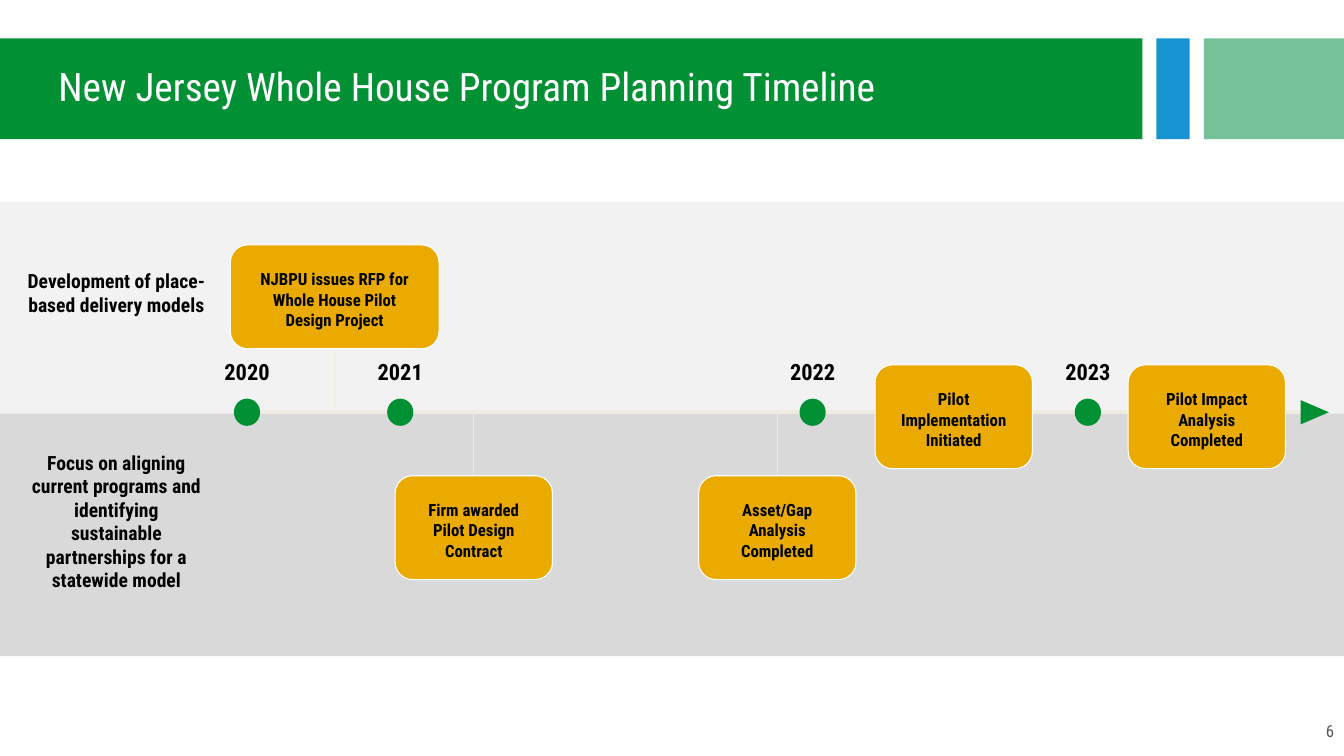
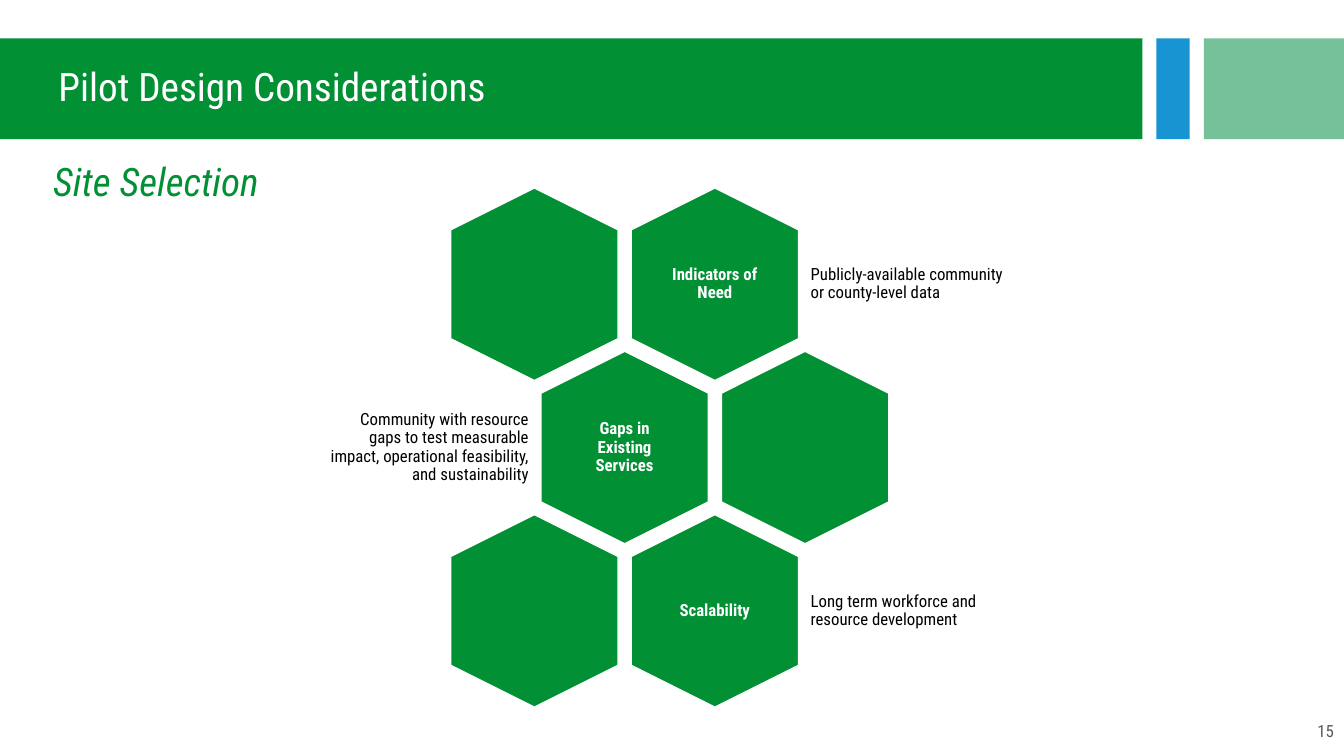
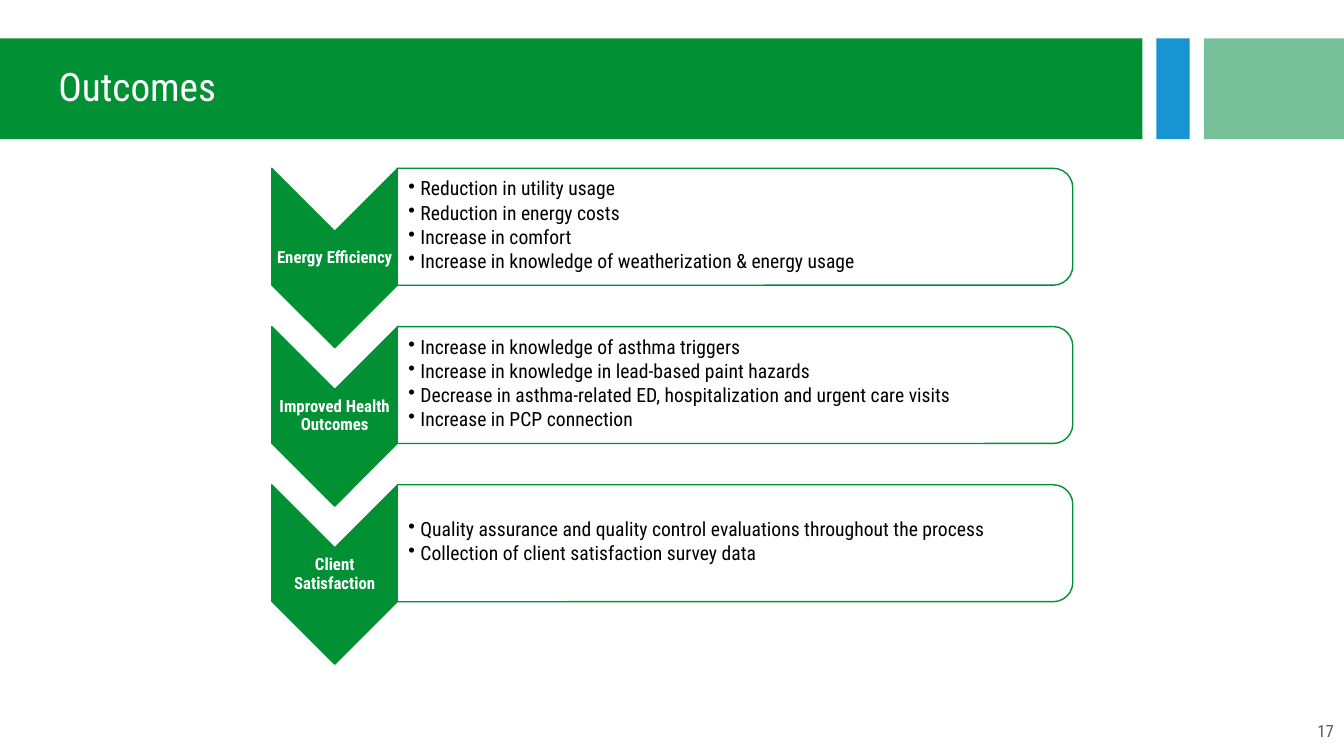
from dataclasses import dataclass

from lxml.etree import SubElement
from pptx import Presentation
from pptx.dml.color import RGBColor
from pptx.enum.shapes import MSO_CONNECTOR, MSO_SHAPE
from pptx.enum.text import MSO_ANCHOR, PP_ALIGN
from pptx.oxml.ns import qn
from pptx.shapes.autoshape import Shape
from pptx.slide import Slide
from pptx.util import Inches, Pt


# Theme: colours and type sizes
@dataclass(frozen=True)
class Theme:
    font: str = "Roboto Condensed"
    green: str = "029035"
    blue: str = "1894D2"
    mint: str = "77C19A"
    gold: str = "EAAA00"
    cream: str = "EEECE1"
    light_gray: str = "F2F2F2"
    mid_gray: str = "D9D9D9"
    number_gray: str = "595959"
    white: str = "FFFFFF"
    black: str = "000000"
    title_size: int = 28
    year_size: int = 16
    body_size: int = 14
    small_size: int = 12


THEME = Theme()


@dataclass(frozen=True)
class Area:
    left: float
    top: float
    width: float
    height: float

    @classmethod
    def centred(cls, x: float, y: float, width: float, height: float) -> "Area":
        return cls(x - width / 2, y - height / 2, width, height)

    def lengths(self) -> list[Inches]:
        return [Inches(v) for v in (self.left, self.top, self.width, self.height)]


@dataclass(frozen=True)
class TextStyle:
    size: int
    color: str = THEME.black
    bold: bool = False
    italic: bool = False
    align: PP_ALIGN = PP_ALIGN.LEFT
    anchor: MSO_ANCHOR = MSO_ANCHOR.TOP
    margins: tuple[float, float, float, float] = (0.1, 0.05, 0.1, 0.05)
    line_spacing: float = 1.0
    space_after: float = 0
    bullet_indent: float = 0
    wrap: bool = True


# Text styles
FLUSH = (0, 0, 0, 0)
TIGHT = (0.05, 0.05, 0.05, 0.05)
HAIRLINE = (0.01, 0.01, 0.01, 0.01)
TITLE = TextStyle(THEME.title_size, THEME.white, anchor=MSO_ANCHOR.MIDDLE,
                  margins=(0.6, 0.05, 0.1, 0.05), line_spacing=0.9)
SUBTITLE = TextStyle(THEME.title_size, THEME.green, italic=True, line_spacing=0.9)
PAGE_NUMBER = TextStyle(THEME.small_size, THEME.number_gray, align=PP_ALIGN.RIGHT)
YEAR = TextStyle(THEME.year_size, bold=True, align=PP_ALIGN.CENTER, margins=FLUSH)
LANE = TextStyle(THEME.body_size, bold=True, align=PP_ALIGN.CENTER, margins=FLUSH)
MILESTONE = TextStyle(THEME.small_size, bold=True, align=PP_ALIGN.CENTER,
                      anchor=MSO_ANCHOR.MIDDLE, margins=(0.1, 0.1, 0.1, 0.05), wrap=False)
HEXAGON = TextStyle(THEME.small_size, THEME.white, bold=True, align=PP_ALIGN.CENTER,
                    anchor=MSO_ANCHOR.MIDDLE, margins=TIGHT, line_spacing=0.9)
NOTE_RIGHT = TextStyle(THEME.small_size, anchor=MSO_ANCHOR.MIDDLE, margins=TIGHT,
                       line_spacing=0.9)
NOTE_LEFT = TextStyle(THEME.small_size, align=PP_ALIGN.RIGHT, anchor=MSO_ANCHOR.MIDDLE,
                      margins=TIGHT, line_spacing=0.9)
CHEVRON = TextStyle(THEME.small_size, THEME.white, bold=True, align=PP_ALIGN.CENTER,
                    anchor=MSO_ANCHOR.MIDDLE, margins=HAIRLINE, line_spacing=0.9)
BULLETS = TextStyle(THEME.body_size, anchor=MSO_ANCHOR.MIDDLE,
                    margins=(0.11, 0.01, 0.01, 0.01), line_spacing=0.9,
                    space_after=2.1, bullet_indent=0.12)


# Drawing helpers
def write(box: Shape, lines: list[str], style: TextStyle) -> None:
    frame = box.text_frame
    frame.word_wrap = style.wrap
    frame.vertical_anchor = style.anchor
    (frame.margin_left, frame.margin_top,
     frame.margin_right, frame.margin_bottom) = map(Inches, style.margins)
    for index, line in enumerate(lines):
        para = frame.add_paragraph() if index else frame.paragraphs[0]
        para.text = line
        if style.bullet_indent:
            indent = Inches(style.bullet_indent)
            properties = para._p.get_or_add_pPr()
            properties.set("marL", str(indent))
            properties.set("indent", str(-indent))
            SubElement(properties, qn("a:buChar"), char="•")
        para.alignment = style.align
        para.line_spacing = style.line_spacing
        para.space_after = Pt(style.space_after)
        font = para.font
        font.name, font.size = THEME.font, Pt(style.size)
        font.bold, font.italic = style.bold, style.italic
        font.color.rgb = RGBColor.from_string(style.color)


def add_text(page: Slide, area: Area, lines: list[str], style: TextStyle) -> None:
    write(page.shapes.add_textbox(*area.lengths()), lines, style)


def add_figure(page: Slide, kind: MSO_SHAPE, area: Area, fill: str,
               line: str | None = None, line_width: float = 1,
               rotation: float = 0) -> Shape:
    figure = page.shapes.add_shape(kind, *area.lengths())
    figure.shadow.inherit = False
    figure.rotation = rotation
    figure.fill.solid()
    figure.fill.fore_color.rgb = RGBColor.from_string(fill)
    if line:
        figure.line.color.rgb = RGBColor.from_string(line)
        figure.line.width = Pt(line_width)
    else:
        figure.line.fill.background()
    return figure


def add_line(page: Slide, start: tuple[float, float], end: tuple[float, float],
             width: float) -> None:
    connector = page.shapes.add_connector(
        MSO_CONNECTOR.STRAIGHT, *map(Inches, start + end))
    connector.line.color.rgb = RGBColor.from_string(THEME.cream)
    connector.line.width = Pt(width)
    SubElement(connector._element.spPr, qn("a:effectLst"))


# Shared bands, title and page number
TITLE_BAND = Area(-0.02, 0.38, 11.35, 1)


def add_page(deck: Presentation, title: str, number: int) -> Slide:
    page = deck.slides.add_slide(deck.slide_layouts[6])
    add_figure(page, MSO_SHAPE.RECTANGLE, Area(11.47, 0.38, 0.33, 1), THEME.blue)
    add_figure(page, MSO_SHAPE.RECTANGLE, Area(11.94, 0.38, 1.39, 1), THEME.mint)
    add_figure(page, MSO_SHAPE.RECTANGLE, TITLE_BAND, THEME.green)
    add_text(page, TITLE_BAND, [title], TITLE)
    add_text(page, Area(10.33, 7.1, 3, 0.4), [str(number)], PAGE_NUMBER)
    return page


# Timeline
@dataclass(frozen=True)
class Milestone:
    centre: float
    top: float
    lines: list[str]
    width: float = 1.56
    height: float = 1.03


AXIS_Y = 4.09
YEARS = {"2020": 2.45, "2021": 3.97, "2022": 8.06, "2023": 10.79}
MILESTONES = [
    Milestone(3.32, 2.43, ["NJBPU issues RFP for", "Whole House Pilot", "Design Project"], 2.07),
    Milestone(4.7, 4.72, ["Firm awarded", "Pilot Design", "Contract"]),
    Milestone(7.71, 4.72, ["Asset/Gap", "Analysis", "Completed"]),
    Milestone(9.46, 3.62, ["Pilot", "Implementation", "Initiated"]),
    Milestone(11.97, 3.62, ["Pilot Impact", "Analysis", "Completed"]),
]


def add_milestone(page: Slide, milestone: Milestone) -> None:
    centre, top = milestone.centre, milestone.top
    bottom = top + milestone.height
    if bottom < AXIS_Y:
        add_line(page, (centre, bottom), (centre, AXIS_Y), 0.75)
    elif top > AXIS_Y:
        add_line(page, (centre, AXIS_Y), (centre, top), 0.75)
    area = Area(centre - milestone.width / 2, top, milestone.width, milestone.height)
    box = add_figure(page, MSO_SHAPE.ROUNDED_RECTANGLE, area, THEME.gold, THEME.white, 0.75)
    write(box, milestone.lines, MILESTONE)


def build_timeline(deck: Presentation) -> None:
    page = add_page(deck, "New Jersey Whole House Program Planning Timeline", 6)
    add_figure(page, MSO_SHAPE.RECTANGLE, Area(0, 4.1, 13.33, 2.41), THEME.mid_gray)
    add_figure(page, MSO_SHAPE.RECTANGLE, Area(0, 2, 13.33, 2.1), THEME.light_gray)
    add_text(page, Area(0.27, 2.67, 1.77, 0.76),
             ["Development of place-based delivery models"], LANE)
    add_text(page, Area(0.27, 4.47, 1.77, 1.5),
             ["Focus on aligning current programs and identifying sustainable "
              "partnerships for a statewide model"], LANE)
    add_line(page, (2.32, AXIS_Y), (12.91, AXIS_Y), 2.75)
    add_figure(page, MSO_SHAPE.ISOSCELES_TRIANGLE,
               Area.centred(13.04, AXIS_Y, 0.24, 0.28), THEME.green, rotation=90)
    for year, centre in YEARS.items():
        add_figure(page, MSO_SHAPE.OVAL, Area.centred(centre, AXIS_Y, 0.26, 0.27), THEME.green)
        add_text(page, Area(centre - 0.325, 3.55, 0.65, 0.35), [year], YEAR)
    for milestone in MILESTONES:
        add_milestone(page, milestone)


# Honeycomb of site criteria
@dataclass(frozen=True)
class Cell:
    row: int
    column: float
    label: str = ""
    note: str = ""
    note_on_left: bool = False


CELLS = [
    Cell(0, 0),
    Cell(0, 1, "Indicators of Need", "Publicly-available community or county-level data"),
    Cell(1, 0.5, "Gaps in Existing Services",
         "Community with resource gaps to test measurable impact, operational "
         "feasibility, and sustainability", note_on_left=True),
    Cell(1, 1.5),
    Cell(2, 0),
    Cell(2, 1, "Scalability", "Long term workforce and resource development"),
]


def add_cell(page: Slide, cell: Cell) -> None:
    x, y = 5.3 + 1.79 * cell.column, 2.82 + 1.62 * cell.row
    add_figure(page, MSO_SHAPE.HEXAGON, Area.centred(x, y, 1.91, 1.66),
               THEME.green, THEME.white, rotation=90)
    if cell.label:
        note_width, note_gap = 2.1, 0.9
        note_left = x - note_gap - note_width if cell.note_on_left else x + note_gap
        add_text(page, Area.centred(x, y, 1.14, 1.32), [cell.label], HEXAGON)
        add_text(page, Area(note_left, y - 0.575, note_width, 1.15), [cell.note],
                 NOTE_LEFT if cell.note_on_left else NOTE_RIGHT)


def build_site_selection(deck: Presentation) -> None:
    page = add_page(deck, "Pilot Design Considerations", 15)
    for cell in CELLS:
        add_cell(page, cell)
    add_text(page, Area(0.43, 1.56, 6.5, 0.27), ["Site Selection"], SUBTITLE)


# Outcome rows
@dataclass(frozen=True)
class Outcome:
    label: str
    results: list[str]


OUTCOMES = [
    Outcome("Energy Efficiency", [
        "Reduction in utility usage",
        "Reduction in energy costs",
        "Increase in comfort",
        "Increase in knowledge of weatherization & energy usage"]),
    Outcome("Improved Health Outcomes", [
        "Increase in knowledge of asthma triggers",
        "Increase in knowledge in lead-based paint hazards",
        "Decrease in asthma-related ED, hospitalization and urgent care visits",
        "Increase in PCP connection"]),
    Outcome("Client Satisfaction", [
        "Quality assurance and quality control evaluations throughout the process",
        "Collection of client satisfaction survey data"]),
]


def add_outcome(page: Slide, outcome: Outcome, top: float) -> None:
    add_figure(page, MSO_SHAPE.CHEVRON, Area.centred(3.32, top + 0.89, 1.78, 1.25),
               THEME.green, THEME.green, rotation=90)
    add_text(page, Area.centred(3.32, top + 0.89, 1.25, 0.53), [outcome.label], CHEVRON)
    add_figure(page, MSO_SHAPE.ROUND_2_SAME_RECTANGLE,
               Area.centred(7.29, top + 0.58, 1.16, 6.7),
               THEME.white, THEME.green, rotation=90)
    add_text(page, Area(3.94, top + 0.05, 6.64, 1.04), outcome.results, BULLETS)


def build_outcomes(deck: Presentation) -> None:
    page = add_page(deck, "Outcomes", 17)
    for row, outcome in enumerate(OUTCOMES):
        add_outcome(page, outcome, 1.67 + 1.57 * row)


def main() -> None:
    deck = Presentation()
    deck.slide_width, deck.slide_height = Inches(13.33), Inches(7.5)
    build_timeline(deck)
    build_site_selection(deck)
    build_outcomes(deck)
    deck.save("out.pptx")


if __name__ == "__main__":
    main()
